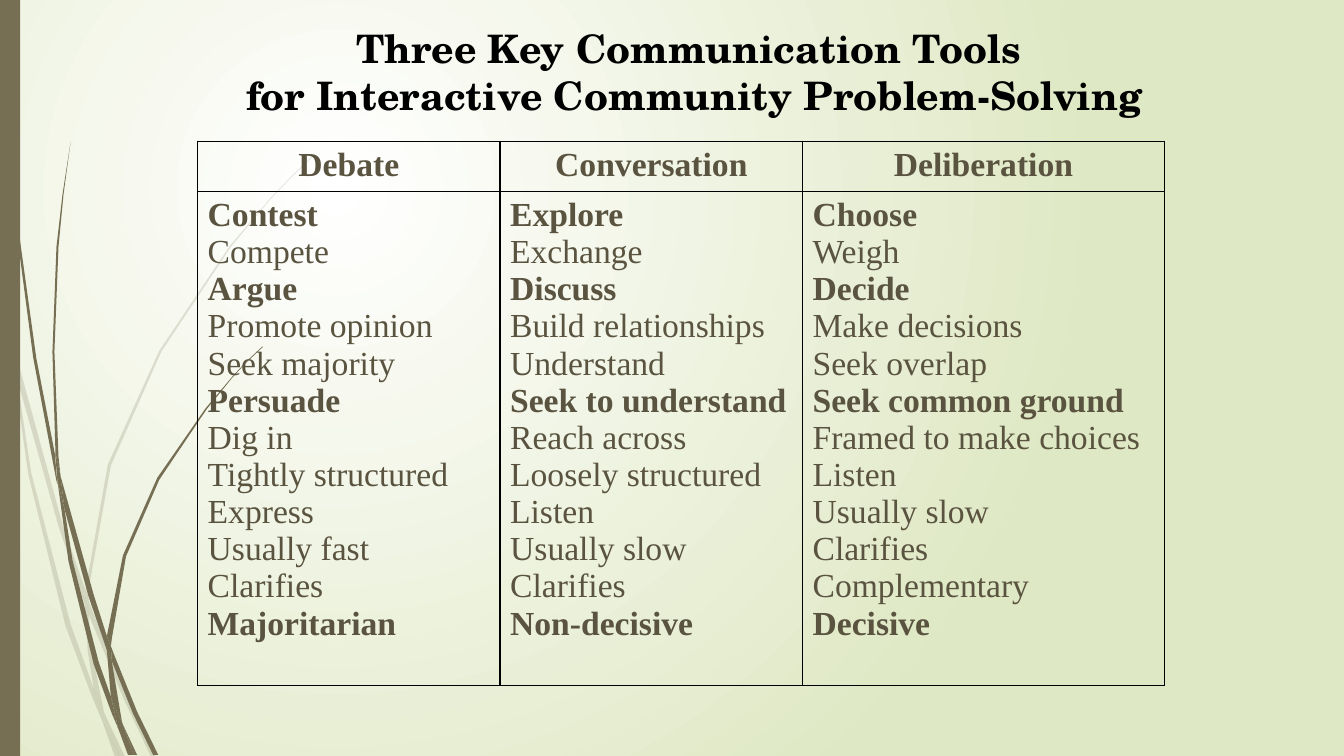
import pptx
import pptx.util
import pptx.dml.color
import pptx.enum.shapes
import pptx.enum.text
import pptx.oxml
import pptx.oxml.ns
from pptx.util import Inches

OLIVE = pptx.dml.color.RGBColor(0x76, 0x6F, 0x54)
TEXT_BROWN = pptx.dml.color.RGBColor(0x59, 0x53, 0x3F)
BLACK = pptx.dml.color.RGBColor(0, 0, 0)
WHITE = pptx.dml.color.RGBColor(0xFF, 0xFF, 0xFF)
PALE_GREEN = pptx.dml.color.RGBColor(0xDF, 0xE8, 0xC4)
CENTER = pptx.enum.text.PP_ALIGN.CENTER
LEFT = pptx.enum.text.PP_ALIGN.LEFT
NAMESPACE = pptx.oxml.ns.nsdecls("a")

# Outline points of the grass blades, in inches
PALE_BLADES = [
    [(0.11, 3.5), (0.09, 3.22), (0, 2.82), (0, 2.99), (0.1, 3.44)],
    [(0.58, 5.22), (0.84, 5.99), (0.85, 5.86), (0.62, 5.2), (0.14, 3.45), (0.17, 3.76)],
    [(0.92, 6.07), (0.88, 5.96), (0.88, 6.1), (1.23, 6.94), (1.5, 7.51), (1.55, 7.51),
     (1.27, 6.92)],
    [(1.19, 7.51), (1.24, 7.51), (1.05, 7.11)],
    [(0.93, 6.83), (0.7, 6.19), (0.31, 4.69), (0.17, 3.76), (0.11, 3.5), (0.28, 4.7),
     (0.65, 6.21), (0.92, 6.93), (1.01, 7.14), (0.99, 7.07)],
    [(0.84, 5.99), (0.87, 6.46), (0.93, 6.83), (0.96, 6.92), (1.05, 7.11), (1.03, 7.06),
     (0.91, 6.46), (0.88, 6.1), (0.88, 6.08)],
    [(0.88, 5.84), (1.1, 4.62), (1.6, 3.49), (2.29, 2.45), (2.68, 1.98), (2.9, 1.75),
     (3.12, 1.54), (3.12, 1.53), (2.89, 1.75), (2.68, 1.97), (2.28, 2.44), (1.58, 3.48),
     (1.07, 4.61), (0.85, 5.84), (0.85, 5.86), (0.88, 5.96)],
    [(1.01, 7.14), (1.14, 7.51), (1.19, 7.51)],
    [(0.88, 6.08), (0.88, 6.1), (0.88, 5.96), (0.85, 5.86), (0.84, 5.99)],
    [(0.96, 6.92), (0.93, 6.83), (0.99, 7.07), (1.01, 7.14), (1.19, 7.51), (1.05, 7.11)],
]
DARK_BLADES = [
    [(0.07, 1.1), (0.17, 2.33), (0.33, 3.55), (0.56, 4.77), (0.57, 4.81), (0.55, 4.57),
     (0.55, 4.53), (0.36, 3.55), (0.19, 2.32), (0.08, 1.09), (0.05, 0.48), (0.04, 0),
     (0.03, 0), (0.04, 0.48)],
    [(0.88, 5.92), (1.06, 6.45), (1.06, 6.33), (1.06, 6.31), (0.93, 5.9), (0.6, 4.72),
     (0.64, 5.05)],
    [(1.13, 6.49), (1.1, 6.41), (1.11, 6.56), (1.32, 7.08), (1.52, 7.49), (1.57, 7.49),
     (1.36, 7.06)],
    [(1.1, 6.91), (0.98, 6.57), (0.72, 5.56), (0.64, 5.05), (0.57, 4.77), (0.68, 5.57),
     (0.93, 6.59), (1.11, 7.08), (1.17, 7.22), (1.16, 7.17)],
    [(0.6, 4.72), (0.58, 4.53), (0.54, 3.49), (0.58, 2.45), (0.63, 1.93), (0.7, 1.41),
     (0.62, 1.93), (0.56, 2.45), (0.52, 3.49), (0.55, 4.49)],
    [(1.33, 7.49), (1.36, 7.49), (1.22, 7.19)],
    [(0.57, 4.77), (0.64, 5.05), (0.6, 4.72), (0.55, 4.49), (0.55, 4.53)],
    [(1.11, 6.33), (1.25, 5.52), (1.58, 4.76), (2.05, 4.06), (2.31, 3.74), (2.45, 3.59),
     (2.61, 3.44), (2.6, 3.44), (2.45, 3.58), (2.31, 3.73), (2.04, 4.05), (1.56, 4.74),
     (1.22, 5.51), (1.06, 6.31), (1.1, 6.41)],
    [(1.17, 7.22), (1.27, 7.49), (1.31, 7.49)],
    [(1.06, 6.45), (1.1, 6.91), (1.16, 7.06), (1.22, 7.19), (1.21, 7.16), (1.11, 6.56),
     (1.09, 6.51)],
    [(1.06, 6.45), (1.09, 6.51), (1.11, 6.56), (1.1, 6.41), (1.06, 6.31), (1.06, 6.33)],
    [(1.16, 7.06), (1.1, 6.91), (1.16, 7.17), (1.17, 7.22), (1.3, 7.49), (1.33, 7.49),
     (1.22, 7.19)],
]
TOOLS = {
    "Debate": ["Contest", "Compete", "Argue", "Promote opinion", "Seek majority", "Persuade",
               "Dig in", "Tightly structured", "Express", "Usually fast", "Clarifies",
               "Majoritarian"],
    "Conversation": ["Explore", "Exchange", "Discuss", "Build relationships", "Understand",
                     "Seek to understand", "Reach across", "Loosely structured", "Listen",
                     "Usually slow", "Clarifies", "Non-decisive"],
    "Deliberation": ["Choose", "Weigh", "Decide", "Make decisions", "Seek overlap",
                     "Seek common ground", "Framed to make choices", "Listen",
                     "Usually slow", "Clarifies", "Complementary", "Decisive"],
}
BOLD_LINES = (0, 2, 5, 11)


def add_line(text_frame, index, text, size, font_name, color, bold, alignment):
    paragraph = text_frame.paragraphs[0] if index == 0 else text_frame.add_paragraph()
    paragraph.alignment = alignment
    run = paragraph.add_run()
    run.text = text
    run.font.size = pptx.util.Pt(size)
    run.font.name = font_name
    run.font.color.rgb = color
    run.font.bold = bold
    return paragraph


def fill_plain(shape):
    shape.shadow.inherit = False
    shape.fill.solid()
    shape.fill.fore_color.rgb = OLIVE
    shape.line.fill.background()


presentation = pptx.Presentation()
presentation.slide_width = Inches(13.33)
presentation.slide_height = Inches(7.5)
slide = presentation.slides.add_slide(presentation.slide_layouts[6])

# Background: circular gradient, white towards the upper left
background = slide.background.fill
background.gradient()
for stop, color, position in zip(background.gradient_stops, (WHITE, PALE_GREEN), (0, 1)):
    stop.color.rgb = color
    stop.position = position
gradient = slide.element.find(".//" + pptx.oxml.ns.qn("a:gradFill"))
gradient.remove(gradient.find(pptx.oxml.ns.qn("a:lin")))
gradient.append(pptx.oxml.parse_xml(
    f'<a:path {NAMESPACE} path="circle">'
    '<a:fillToRect l="50000" t="50000" r="100000" b="100000"/></a:path>'))

# Grass blades
for blades, opacity in ((PALE_BLADES, 20), (DARK_BLADES, 100)):
    group = slide.shapes.add_group_shape()
    for points in blades:
        outline = [(Inches(x), Inches(y)) for x, y in points]
        builder = group.shapes.build_freeform(*outline[0])
        builder.add_line_segments(outline[1:], close=True)
        blade = builder.convert_to_shape()
        fill_plain(blade)
        if opacity < 100:
            color_element = blade.element.spPr.find(".//" + pptx.oxml.ns.qn("a:srgbClr"))
            color_element.append(pptx.oxml.parse_xml(
                f'<a:alpha {NAMESPACE} val="{opacity * 1000}"/>'))

# Left band
band = slide.shapes.add_shape(
    pptx.enum.shapes.MSO_SHAPE.RECTANGLE, 0, 0, Inches(0.2), Inches(7.5))
fill_plain(band)

# Table of tools
table = slide.shapes.add_table(
    2, 3, Inches(1.96), Inches(1.4), Inches(9.59), Inches(5.4)).table
table.first_row = False
table.horz_banding = False
for column, width in zip(table.columns, (3, 3, 3.59)):
    column.width = Inches(width)
for row, height in zip(table.rows, (0.5, 4.9)):
    row.height = Inches(height)
for column_index, (tool, traits) in enumerate(TOOLS.items()):
    for row_index, lines in enumerate(([tool], traits)):
        cell = table.cell(row_index, column_index)
        for index, text in enumerate(lines):
            paragraph = add_line(cell.text_frame, index, text, 24, "Times New Roman",
                                 TEXT_BROWN, index in BOLD_LINES,
                                 LEFT if row_index else CENTER)
            properties = paragraph._p.get_or_add_pPr()
            properties.set("marL", str(Inches(0.38)))
            properties.set("indent", str(Inches(-0.38)))
        cell_properties = cell._tc.get_or_add_tcPr()
        for side in "LRTB":
            cell_properties.append(pptx.oxml.parse_xml(
                f'<a:ln{side} {NAMESPACE} w="12700"><a:solidFill>'
                f'<a:srgbClr val="{BLACK}"/></a:solidFill></a:ln{side}>'))
        cell.fill.background()

# Title
title = slide.shapes.add_textbox(Inches(2.34), Inches(0.19), Inches(9.09), Inches(1.04))
title.text_frame.word_wrap = False
title.text_frame.auto_size = pptx.enum.text.MSO_AUTO_SIZE.SHAPE_TO_FIT_TEXT
for index, text in enumerate(("Three Key Communication Tools ",
                              "for Interactive Community Problem-Solving")):
    add_line(title.text_frame, index, text, 28, "TeX Gyre Schola", BLACK, True, CENTER)

presentation.save("out.pptx")
